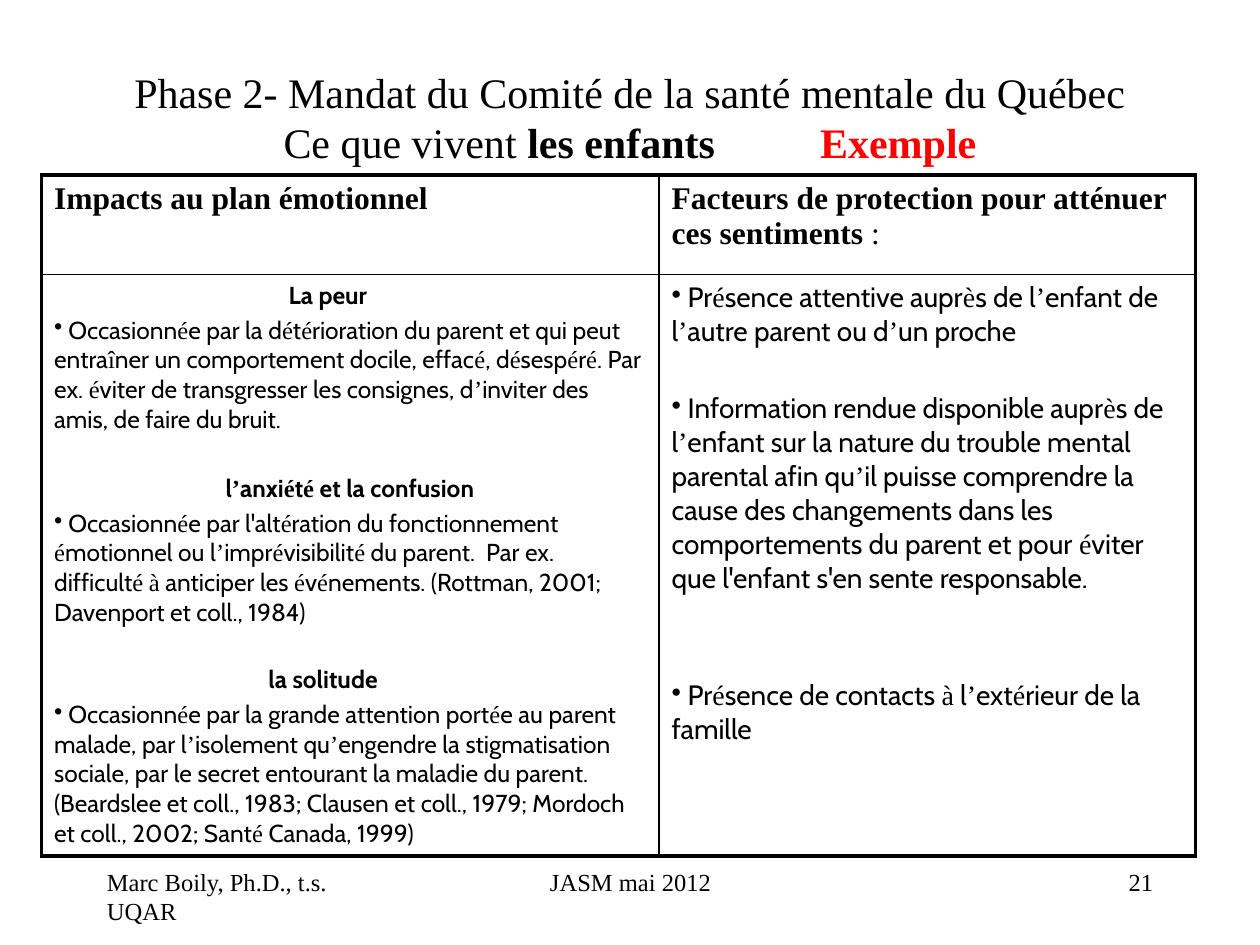
from itertools import groupby

from lxml import etree
from pptx import Presentation
from pptx import util as u
from pptx.dml.color import RGBColor
from pptx.enum import text
from pptx.oxml.ns import qn

WIDTH, HEIGHT = u.Inches(10), u.Inches(7.5)
COLORS = {"ink": "000000", "accent": "FF0000", "page": "FFFFFF"}
SERIF, SANS = "Times New Roman", "Cabin"
THICK, THIN = 2.25, 1
ALIGN = text.PP_ALIGN

# Left, top, width and height as shares of the slide
TITLE_BOX = (0.075, 0.067, 0.85, 0.113)
TABLE_BOX = (0.033, 0.185, 0.916, 0.721)
FOOTER_BOX = (0.075, 0.911, 0.85, 0.067)
COLUMN_SHARES = (0.535, 0.465)
ROW_SHARES = (0.146, 0.854)

HEADERS = (
    [("Impacts au plan émotionnel", True)],
    [("Facteurs de protection pour atténuer ces sentiments", True), (" :", False)],
)
# Heading, its indent in inches, the space before it in points, explanation
IMPACTS = (
    ("La peur", 1.86, 2.8,
     "Occasionnée par la détérioration du parent et qui peut entraîner un "
     "comportement docile, effacé, désespéré. Par ex. éviter de transgresser "
     "les consignes, d’inviter des amis, de faire du bruit."),
    ("l’anxiété et la confusion", 1.36, 22.4,
     "Occasionnée par l'altération du fonctionnement émotionnel ou "
     "l’imprévisibilité du parent.  Par ex. difficulté à anticiper les "
     "événements. (Rottman, 2001; Davenport et coll., 1984)"),
    ("la solitude", 1.7, 21.2,
     "Occasionnée par la grande attention portée au parent malade, par "
     "l’isolement qu’engendre la stigmatisation sociale, par le secret "
     "entourant la maladie du parent. (Beardslee et coll., 1983; Clausen et "
     "coll., 1979; Mordoch et coll., 2002; Santé Canada, 1999)"),
)
# Space before in points, factor
FACTORS = (
    (3.2, "Présence attentive auprès de l’enfant de l’autre parent ou d’un proche"),
    (25, "Information rendue disponible auprès de l’enfant sur la nature du "
         "trouble mental parental afin qu’il puisse comprendre la cause des "
         "changements dans les comportements du parent et pour éviter que "
         "l'enfant s'en sente responsable."),
    (48, "Présence de contacts à l’extérieur de la famille"),
)


def place(box):
    left, top, width, height = box
    return [int(share * side) for share, side in
            ((left, WIDTH), (top, HEIGHT), (width, WIDTH), (height, HEIGHT))]


def write(para, words, size=14, font=SERIF, color="ink", bold=False, spacing=None):
    """Add words to a paragraph; accents and curly quotes are always serif."""
    for plain, letters in groupby(words, key=str.isascii):
        span = para.add_run()
        span.text = "".join(letters)
        span.font.name = font if plain else SERIF
        span.font.size = u.Pt(size)
        span.font.bold = bold
        span.font.color.rgb = RGBColor.from_string(COLORS[color])
        if spacing:
            span.font._element.set("spc", str(spacing * 100))


def new_para(frame, before=0, indent=0, bullet=False):
    """Return the frame's first paragraph while it is empty, or else a new one."""
    para = frame.paragraphs[0]
    if para.runs:
        para = frame.add_paragraph()
    para.space_before = u.Pt(before)
    properties = para._p.get_or_add_pPr()
    properties.set("marL", str(u.Inches(indent)))
    properties.set("indent", "0")
    if bullet:
        etree.SubElement(properties, qn("a:buChar"), char="•")
    return para


def add_text_box(page, box, anchor=text.MSO_ANCHOR.TOP):
    frame = page.shapes.add_textbox(*place(box)).text_frame
    frame.word_wrap = True
    frame.vertical_anchor = anchor
    return frame


def add_title(page, box):
    para = new_para(add_text_box(page, box, text.MSO_ANCHOR.MIDDLE))
    para.alignment = ALIGN.CENTER
    write(para, "Phase 2- Mandat du Comité de la santé mentale du Québec", size=24)
    para.add_line_break()
    write(para, "Ce que vivent ", size=24)
    write(para, "les enfants", size=24, bold=True)
    write(para, " ", size=24, bold=True, spacing=54)
    write(para, "Exemple", size=24, bold=True, color="accent")


def add_border(cell, side, points):
    line = etree.SubElement(cell._tc.get_or_add_tcPr(), qn(f"a:ln{side}"),
                            w=str(u.Pt(points)))
    fill = etree.SubElement(line, qn("a:solidFill"))
    etree.SubElement(fill, qn("a:srgbClr"), val=COLORS["ink"])


def style_grid(table):
    """Thick lines around the table, thin lines inside it."""
    last_row, last_column = len(table.rows) - 1, len(table.columns) - 1
    for r, row in enumerate(table.rows):
        for c, cell in enumerate(row.cells):
            edges = {"L": c == 0, "R": c == last_column,
                     "T": r == 0, "B": r == last_row}
            for side, outer in edges.items():
                add_border(cell, side, THICK if outer else THIN)
            cell.fill.background()


def fill_impacts(frame):
    for heading, indent, before, explanation in IMPACTS:
        write(new_para(frame, before, indent), heading, font=SANS, bold=True)
        write(new_para(frame, 2.8, bullet=True), " " + explanation, font=SANS)


def fill_factors(frame):
    for before, factor in FACTORS:
        write(new_para(frame, before, bullet=True), " " + factor, size=16, font=SANS)


def add_impact_table(page, box):
    left, top, width, height = place(box)
    table = page.shapes.add_table(2, 2, left, top, width, height).table
    table.first_row = table.horz_banding = False
    for column, share in zip(table.columns, COLUMN_SHARES):
        column.width = int(width * share)
    for row, share in zip(table.rows, ROW_SHARES):
        row.height = int(height * share)
    style_grid(table)
    for c, spans in enumerate(HEADERS):
        para = new_para(table.cell(0, c).text_frame, before=3.6)
        for words, bold in spans:
            write(para, words, size=18, bold=bold)
    fill_impacts(table.cell(1, 0).text_frame)
    fill_factors(table.cell(1, 1).text_frame)


def add_footer(page, box):
    left, top, width, height = box
    parts = (
        ("Marc Boily, Ph.D., t.s. UQAR", 0, 0.245, ALIGN.LEFT),
        ("JASM mai 2012", 0.314, 0.373, ALIGN.CENTER),
        ("21", 0.755, 0.245, ALIGN.RIGHT),
    )
    for words, start, share, align in parts:
        frame = add_text_box(page, (left + start * width, top, share * width, height))
        para = new_para(frame)
        para.alignment = align
        write(para, words)


def main():
    deck = Presentation()
    deck.slide_width, deck.slide_height = WIDTH, HEIGHT
    page = deck.slides.add_slide(deck.slide_layouts[6])
    page.background.fill.solid()
    page.background.fill.fore_color.rgb = RGBColor.from_string(COLORS["page"])
    add_title(page, TITLE_BOX)
    add_impact_table(page, TABLE_BOX)
    add_footer(page, FOOTER_BOX)
    deck.save("out.pptx")


if __name__ == "__main__":
    main()
